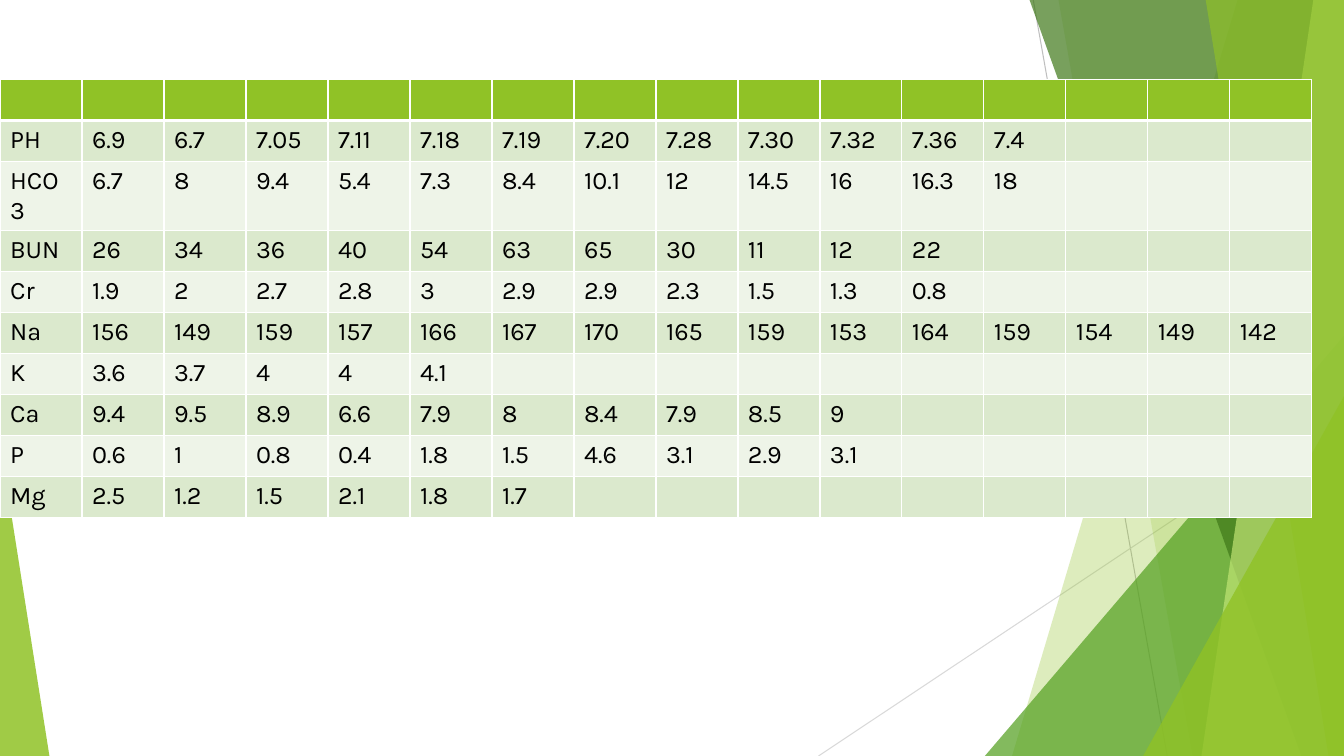
import pptx
import pptx.util
import pptx.dml.color
import pptx.enum.shapes
import pptx.oxml
import pptx.oxml.ns

READINGS = [
    ("", ""),
    ("PH", "6.9 6.7 7.05 7.11 7.18 7.19 7.20 7.28 7.30 7.32 7.36 7.4"),
    ("HCO3", "6.7 8 9.4 5.4 7.3 8.4 10.1 12 14.5 16 16.3 18"),
    ("BUN", "26 34 36 40 54 63 65 30 11 12 22"),
    ("Cr", "1.9 2 2.7 2.8 3 2.9 2.9 2.3 1.5 1.3 0.8"),
    ("Na", "156 149 159 157 166 167 170 165 159 153 164 159 154 149 142"),
    ("K", "3.6 3.7 4 4 4.1"),
    ("Ca", "9.4 9.5 8.9 6.6 7.9 8 8.4 7.9 8.5 9"),
    ("P", "0.6 1 0.8 0.4 1.8 1.5 4.6 3.1 2.9 3.1"),
    ("Mg", "2.5 1.2 1.5 2.1 1.8 1.7"),
]
COLUMNS = 16

THEME = {
    "font": "Karla", "size": 18, "text": "000000",
    "header": "90C226", "bands": ("EEF4E8", "DBE9CD"),
    "border": "FFFFFF", "thin": 1, "thick": 3, "ray": 0.75,
    "lime": "90C226", "leaf": "54A021", "forest": "3F7819", "pale": "C0E474",
    "gray": "BFBFBF", "silver": "D9D9D9",
}

# Positions are percentages of the slide's width and height.
RAYS = [((76.88, 0), (86.85, 100), "gray"), ((100, 53.73), (60.9, 100), "silver")]
FACETS = [
    ("band", 92.1, 75.3, "lime", 30),
    ("band", 78.75, 88.73, "lime", 20),
    ("triangle", (73.28, 44.4, 100), 1, "leaf", 72),
    ("band", 76.58, 96.83, "forest", 70),
    ("band", 97.73, 89.4, "pale", 70),
    ("band", 89.7, 98.85, "lime", 65),
    ("triangle", (85.05, 52.4, 100), 1, "lime", 80),
    ("triangle", (0, 58.53, 3.68), 0, "lime", 85),
]
BAND_TOP = -0.13
TABLE_TOP, TABLE_WIDTH, TABLE_HEIGHT = 10.53, 97.65, 54.13

deck = pptx.Presentation()
deck.slide_width = pptx.util.Inches(13.333)
deck.slide_height = pptx.util.Inches(7.5)
page = deck.slides.add_slide(deck.slide_layouts[6])


def across(share):
    return round(deck.slide_width * share / 100)


def down(share):
    return round(deck.slide_height * share / 100)


def color(name):
    return pptx.dml.color.RGBColor.from_string(THEME.get(name, name))


def add_xml(parent, markup):
    parent.append(pptx.oxml.parse_xml(markup.replace(
        "NS", pptx.oxml.ns.nsdecls("a"))))


def add_ray(start, end, shade):
    ray = page.shapes.add_connector(
        pptx.enum.shapes.MSO_CONNECTOR.STRAIGHT,
        across(start[0]), down(start[1]), across(end[0]), down(end[1]))
    ray.line.color.rgb = color(shade)
    ray.line.width = pptx.util.Pt(THEME["ray"])
    add_xml(ray._element.spPr, "<a:effectLst NS/>")


def add_band(top, bottom):
    outline = page.shapes.build_freeform(across(top), down(BAND_TOP))
    outline.add_line_segments([
        (across(100), down(BAND_TOP)), (across(100), down(100)),
        (across(bottom), down(100))], close=True)
    return outline.convert_to_shape()


def add_triangle(extent, apex):
    left, top, right = extent
    triangle = page.shapes.add_shape(
        pptx.enum.shapes.MSO_SHAPE.ISOSCELES_TRIANGLE,
        across(left), down(top), across(right - left), down(100 - top))
    triangle.adjustments[0] = apex
    return triangle


def add_facet(kind, first, second, shade, opacity):
    facet = {"band": add_band, "triangle": add_triangle}[kind](first, second)
    facet.shadow.inherit = False
    facet.line.fill.background()
    facet.fill.solid()
    facet.fill.fore_color.rgb = color(shade)
    tint = facet._element.spPr.find(".//" + pptx.oxml.ns.qn("a:srgbClr"))
    add_xml(tint, f'<a:alpha NS val="{opacity * 1000}"/>')


def add_borders(cell, row):
    thick_side = {0: "B", 1: "T"}.get(row)
    for side in "LRTB":
        points = THEME["thick" if side == thick_side else "thin"]
        add_xml(cell._tc.get_or_add_tcPr(),
                f'<a:ln{side} NS w="{pptx.util.Pt(points)}"><a:solidFill>'
                f'<a:srgbClr val="{THEME["border"]}"/></a:solidFill></a:ln{side}>')


def fill_cell(cell, row, text):
    add_borders(cell, row)
    cell.fill.solid()
    cell.fill.fore_color.rgb = color(THEME["bands"][row % 2] if row else "header")
    para = cell.text_frame.paragraphs[0]
    formats = {"name": THEME["font"], "size": pptx.util.Pt(THEME["size"])}
    target = para
    if text:
        target = para.add_run()
        target.text = text
        target.font.color.rgb = color("text")
    for key, value in formats.items():
        setattr(target.font, key, value)


def add_readings():
    table = page.shapes.add_table(
        len(READINGS), COLUMNS, 0, down(TABLE_TOP),
        across(TABLE_WIDTH), down(TABLE_HEIGHT)).table
    for row, (label, values) in enumerate(READINGS):
        texts = [label] + values.split()
        texts += [""] * (COLUMNS - len(texts))
        for column, text in enumerate(texts):
            fill_cell(table.cell(row, column), row, text)


for ray in RAYS:
    add_ray(*ray)
for facet in FACETS:
    add_facet(*facet)
add_readings()
deck.save("out.pptx")
